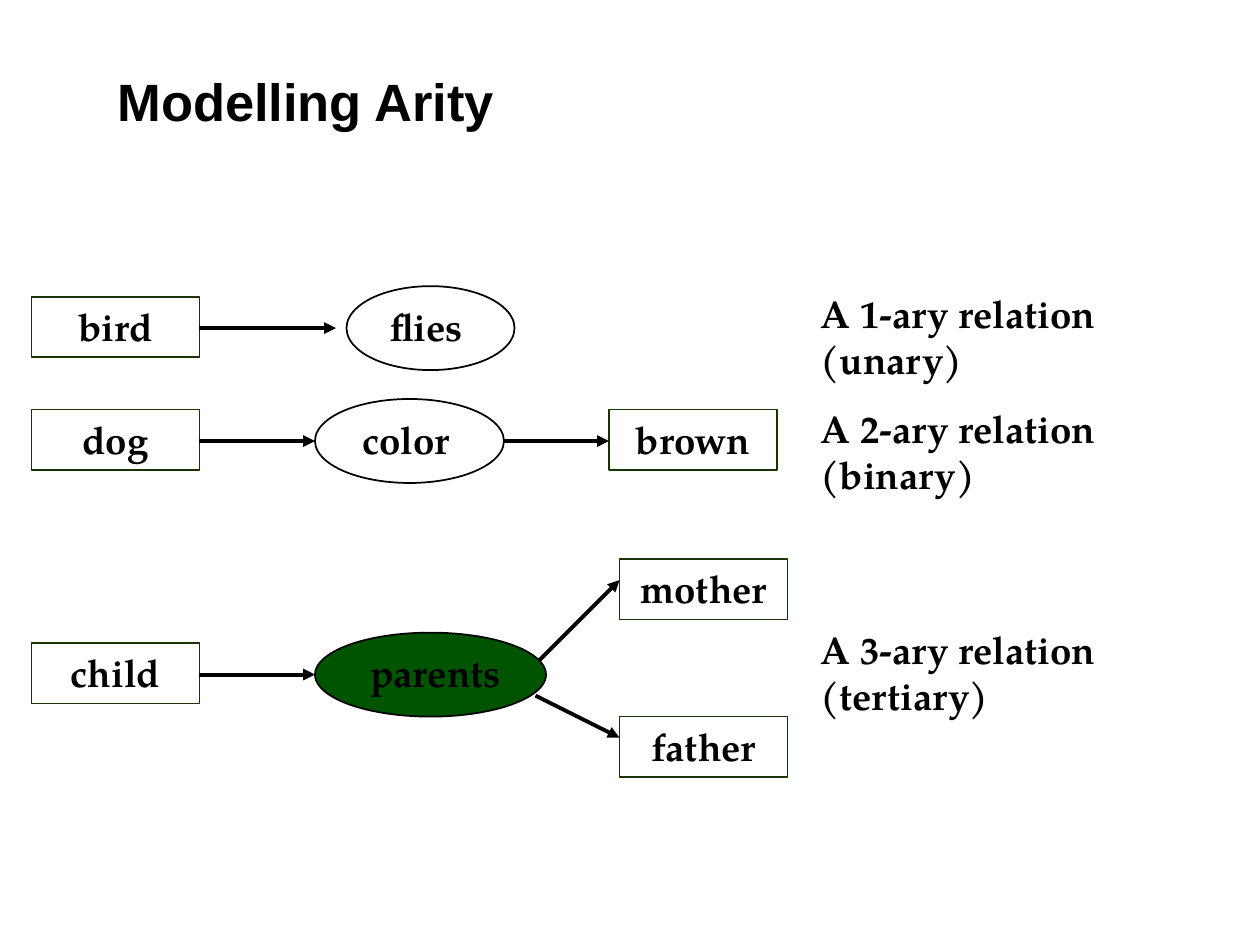
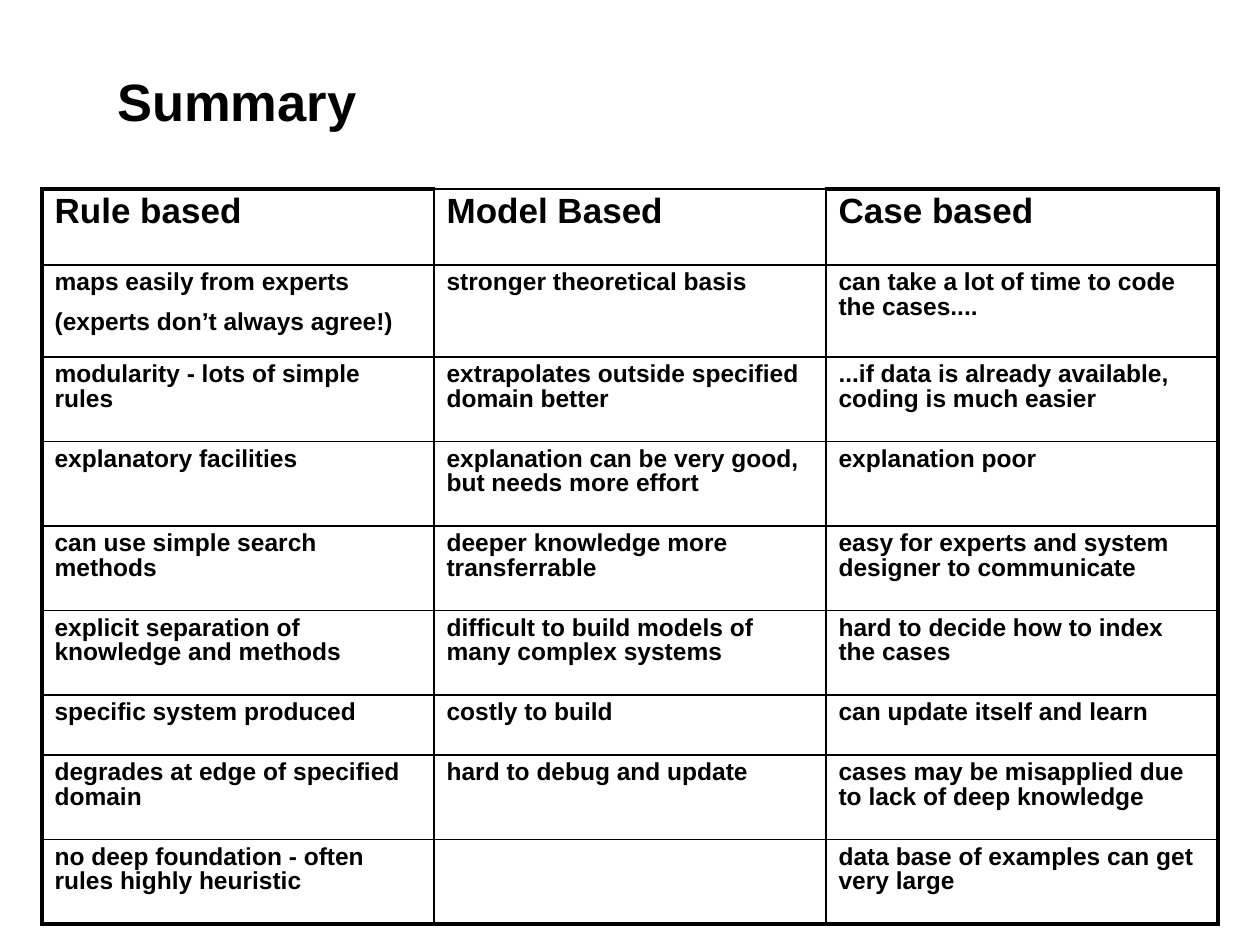
import dataclasses

import lxml.etree
import pptx
import pptx.dml.color
import pptx.enum.dml
import pptx.enum.shapes
import pptx.enum.text
import pptx.oxml
import pptx.oxml.ns
import pptx.util

Pt = pptx.util.Pt
SHAPE = pptx.enum.shapes.MSO_SHAPE
ALIGN = pptx.enum.text.PP_ALIGN
ANCHOR = pptx.enum.text.MSO_ANCHOR

COLORS = {"ink": "000000", "paper": "FFFFFF", "entity_edge": "183400", "highlight": "005400"}
SANS, SERIF = "Arial", "TeX Gyre Pagella"
TITLE_BOX = (60, 36, 606, 48)
LINE_SPACING = 0.89
THIN, THICK = 1, 2.25

# Diagram measures; tops are relative to the top of a relation's row
ENTITY_SIZE = (96, 34.5)
ENTITY_TOP = 6
RELATION_HEIGHT = 48
ARROW_TOP = RELATION_HEIGHT / 2
CAPTION_LEFT = 444


@dataclasses.dataclass
class Relation:
    """One row of the diagram; values are (text, left, top, arrow start, arrow end)."""
    subject: str
    name: str
    oval: tuple  # left, width
    label: tuple  # left, width
    arrow_end: float
    caption: str
    top: float
    caption_top: float = 0
    caption_width: float = 258
    fill: str = "paper"
    values: tuple = ()


RELATIONS = [
    Relation("bird", "flies", (180, 96), (198, 66), 174, "A 1-ary relation (unary)",
             163.5, caption_top=-1.5, caption_width=246),
    Relation("dog", "color", (162, 108), (182, 74), 162, "A 2-ary relation (binary)",
             228, values=(("brown", 330, ENTITY_TOP, (270, ARROW_TOP), (330, ARROW_TOP)),)),
    Relation("child", "parents", (162, 132), (186.5, 91), 162, "A 3-ary relation (tertiary)",
             361.5, caption_top=-7.5, fill="highlight",
             values=(("mother", 336, -42, (288, 18), (336, -30)),
                     ("father", 336, 48, (288, 36), (336, 60)))),
]

COMPARISON = [
    ("Rule based", "Model Based", "Case based"),
    ("maps easily from experts\n(experts don’t always agree!)", "stronger theoretical basis",
     "can take a lot of time to code the cases...."),
    ("modularity - lots of simple rules", "extrapolates outside specified domain better",
     "...if data is already available, coding is much easier"),
    ("explanatory facilities", "explanation can be very good, but needs more effort",
     "explanation poor"),
    ("can use simple search methods", "deeper knowledge more transferrable",
     "easy for experts and system designer to communicate"),
    ("explicit separation of knowledge and methods",
     "difficult to build models of many complex systems",
     "hard to decide how to index the cases"),
    ("specific system produced", "costly to build", "can update itself and learn"),
    ("degrades at edge of specified domain", "hard to debug and update",
     "cases may be misapplied due to lack of deep knowledge"),
    ("no deep foundation - often rules highly heuristic", "",
     "data base of examples can get very large"),
]
ROW_HEIGHTS = [43.5, 52.5, 48.3, 48.3, 48.3, 48.3, 34.3, 48.3, 48.3]


def rgb(name):
    return pptx.dml.color.RGBColor.from_string(COLORS[name])


def points(*lengths):
    return [Pt(length) for length in lengths]


def write(frame, text, font, size, align=ALIGN.LEFT, line_spacing=None):
    """Fill a text frame, one paragraph for each line of text."""
    frame.word_wrap = True
    frame.text = text
    for paragraph in frame.paragraphs:
        paragraph.alignment = align
        paragraph.line_spacing = line_spacing
        paragraph.font.name = font
        paragraph.font.size = Pt(size)
        paragraph.font.bold = True
        paragraph.font.color.rgb = rgb("ink")


def add_text(slide, text, box, font=SERIF, size=22, anchor=ANCHOR.TOP, line_spacing=None):
    frame = slide.shapes.add_textbox(*points(*box)).text_frame
    write(frame, text, font, size, line_spacing=line_spacing)
    frame.vertical_anchor = anchor


def add_outline(slide, kind, box, edge, fill=None):
    shape = slide.shapes.add_shape(kind, *points(*box))
    shape.shadow.inherit = False
    if fill:
        shape.fill.solid()
        shape.fill.fore_color.rgb = rgb(fill)
    else:
        shape.fill.background()
    shape.line.color.rgb = rgb(edge)
    shape.line.width = Pt(THIN)
    return shape


def add_entity(slide, text, left, top):
    entity = add_outline(slide, SHAPE.RECTANGLE, (left, top, *ENTITY_SIZE), "entity_edge")
    write(entity.text_frame, text, SERIF, 22, ALIGN.CENTER)
    entity.text_frame.vertical_anchor = ANCHOR.TOP


def add_arrow(slide, start, end):
    arrow = slide.shapes.add_connector(
        pptx.enum.shapes.MSO_CONNECTOR.STRAIGHT, *points(*start, *end))
    arrow.line.color.rgb = rgb("ink")
    arrow.line.width = Pt(THICK)
    qn = pptx.oxml.ns.qn
    lxml.etree.SubElement(arrow.line._get_or_add_ln(), qn("a:tailEnd"), type="triangle")
    lxml.etree.SubElement(arrow._element.spPr, qn("a:effectLst"))


def add_relation(slide, relation, left, top):
    def at(x, y):
        return left + x, top + y

    add_entity(slide, relation.subject, *at(0, ENTITY_TOP))
    add_arrow(slide, at(ENTITY_SIZE[0], ARROW_TOP), at(relation.arrow_end, ARROW_TOP))
    for text, value_left, value_top, start, end in relation.values:
        add_entity(slide, text, *at(value_left, value_top))
        add_arrow(slide, at(*start), at(*end))

    oval_left, oval_width = relation.oval
    add_outline(slide, SHAPE.OVAL, (*at(oval_left, 0), oval_width, RELATION_HEIGHT),
                "ink", relation.fill)
    label_left, label_width = relation.label
    add_text(slide, relation.name, (*at(label_left, ENTITY_TOP), label_width, ENTITY_SIZE[1]))
    add_text(slide, relation.caption,
             (*at(CAPTION_LEFT, relation.caption_top), relation.caption_width, 60))


def set_borders(cell, widths):
    """Draw the left, right, top and bottom borders, in that order."""
    properties = cell._tc.get_or_add_tcPr()
    namespace = pptx.oxml.ns.nsdecls("a")
    for side, width in zip("LRTB", widths):
        properties.append(pptx.oxml.parse_xml(
            f'<a:ln{side} {namespace} w="{Pt(width)}"><a:solidFill>'
            f'<a:srgbClr val="{COLORS["ink"]}"/></a:solidFill></a:ln{side}>'))


def add_comparison(slide, left, top, width):
    last_row, last_column = len(COMPARISON) - 1, len(COMPARISON[0]) - 1
    table = slide.shapes.add_table(
        last_row + 1, last_column + 1, *points(left, top, width, sum(ROW_HEIGHTS))).table
    table.first_row = table.horz_banding = False
    for column in table.columns:
        column.width = Pt(width / (last_column + 1))
    for r, (height, texts) in enumerate(zip(ROW_HEIGHTS, COMPARISON)):
        table.rows[r].height = Pt(height)
        size = 20 if r == 0 else 14
        for c, text in enumerate(texts):
            cell = table.cell(r, c)
            thick_sides = (c == 0, c == last_column,
                           r == 0 and c in (0, last_column), r == last_row)
            set_borders(cell, [THICK if thick else THIN for thick in thick_sides])
            cell.fill.background()
            write(cell.text_frame, text, SANS, size, line_spacing=LINE_SPACING)
            for p, paragraph in enumerate(cell.text_frame.paragraphs):
                paragraph.space_before = Pt(size / 2 if p else 0)
                paragraph.space_after = Pt(size / 10)


def add_slide(deck, title):
    slide = deck.slides.add_slide(deck.slide_layouts[6])
    slide.background.fill.solid()
    slide.background.fill.fore_color.rgb = rgb("paper")
    add_text(slide, title, TITLE_BOX, SANS, 30, ANCHOR.MIDDLE, LINE_SPACING)
    return slide


def add_arity_slide(deck):
    slide = add_slide(deck, "Modelling Arity")
    for relation in RELATIONS:
        add_relation(slide, relation, 18, relation.top)


def add_summary_slide(deck):
    add_comparison(add_slide(deck, "Summary"), 24, 108, 672)


def main():
    deck = pptx.Presentation()
    deck.slide_width, deck.slide_height = points(720, 540)
    add_arity_slide(deck)
    add_summary_slide(deck)
    deck.save("out.pptx")


if __name__ == "__main__":
    main()
